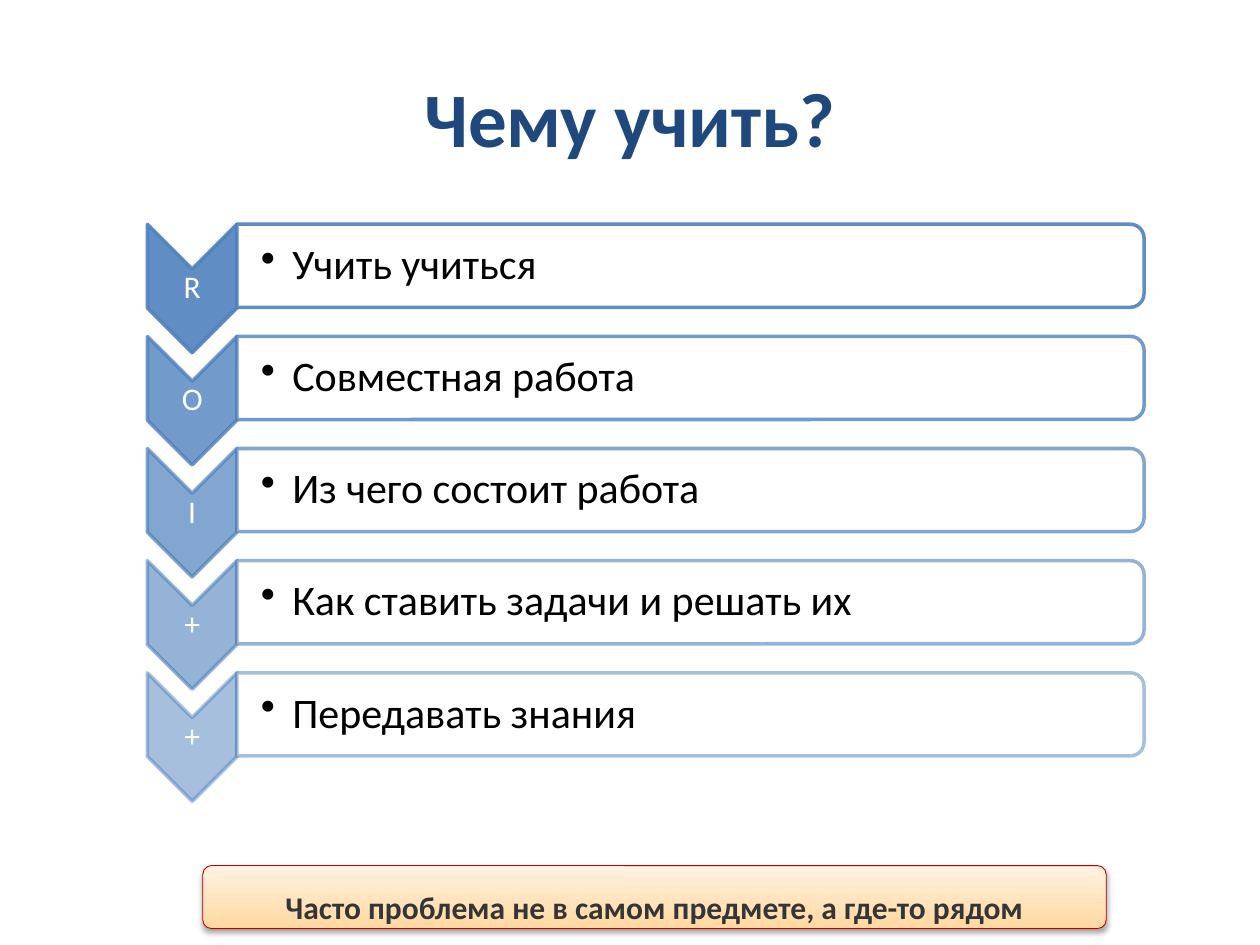
from lxml import etree
from pptx import Presentation
from pptx import util as u
from pptx.dml.color import RGBColor
from pptx.enum import shapes, text
from pptx.oxml import ns

COLORS = {
    "title": "1F497D", "accent": "4F81BD", "panel": "FFFFFF", "letter": "FFFFFF",
    "item": "000000", "note_low": "FFD8A0", "note_high": "FFF2E3",
    "note_line": "C00000", "note": "353535", "shadow": "000000",
}
RGB = {name: RGBColor.from_string(value) for name, value in COLORS.items()}
ITEMS = [
    ("R", "Учить учиться"),
    ("O", "Совместная работа"),
    ("I", "Из чего состоит работа"),
    ("+", "Как ставить задачи и решать их"),
    ("+", "Передавать знания"),
]
FIRST_ROW, ROW_STEP = 1.78, 0.89
CHEVRON_LEFT, CHEVRON_WIDTH, CHEVRON_HEIGHT = 1.17, 0.71, 1.02
PANEL_LEFT, PANEL_WIDTH, PANEL_HEIGHT = 1.88, 7.2, 0.66

presentation = Presentation()
presentation.slide_width, presentation.slide_height = u.Inches(10), u.Inches(7.5)
slide = presentation.slides.add_slide(presentation.slide_layouts[5])


def add_turned(kind, left, top, width, height, fill, opacities):
    shape = slide.shapes.add_shape(
        kind, u.Inches(left + (width - height) / 2), u.Inches(top + (height - width) / 2),
        u.Inches(height), u.Inches(width))
    shape.rotation = 90
    shape.shadow.inherit = False
    shape.fill.solid()
    shape.fill.fore_color.rgb = RGB[fill]
    shape.line.color.rgb = RGB["accent"]
    shape.line.width = u.Pt(2)
    colors = shape._element.spPr.iter(ns.qn("a:srgbClr"))
    for color, opacity in zip(colors, opacities):
        etree.SubElement(color, ns.qn("a:alpha"), val=str(opacity * 1000))


def add_label(words, left, top, width, height, size, color, inset, bullet=False):
    shape = slide.shapes.add_textbox(*map(u.Inches, (left, top, width, height)))
    frame = shape.text_frame
    frame.word_wrap = True
    frame.vertical_anchor = text.MSO_ANCHOR.MIDDLE
    frame.margin_left = u.Inches(inset)
    frame.margin_right = frame.margin_top = frame.margin_bottom = u.Inches(0.01)
    paragraph = frame.paragraphs[0]
    paragraph.text = words
    paragraph.line_spacing = 0.9
    if bullet:
        properties = paragraph._p.get_or_add_pPr()
        properties.set("marL", str(u.Inches(0.25)))
        properties.set("indent", str(-u.Inches(0.25)))
        etree.SubElement(properties, ns.qn("a:buChar"), char="•")
    else:
        paragraph.alignment = text.PP_ALIGN.CENTER
    paragraph.font.name = "Calibri"
    paragraph.font.size = u.Pt(size)
    paragraph.font.color.rgb = RGB[color]


title = slide.shapes.title
title.left, title.top, title.width, title.height = map(u.Inches, (0.5, 0.3, 9, 1.25))
title.text_frame.vertical_anchor = text.MSO_ANCHOR.MIDDLE
paragraph = title.text_frame.paragraphs[0]
paragraph.text = "Чему учить?"
paragraph.alignment = text.PP_ALIGN.CENTER
paragraph.font.name = "Calibri"
paragraph.font.size = u.Pt(44)
paragraph.font.bold = True
paragraph.font.color.rgb = RGB["title"]

for row, (letter, item) in enumerate(ITEMS):
    top = FIRST_ROW + row * ROW_STEP
    opacity = 90 - 10 * row
    add_turned(shapes.MSO_SHAPE.CHEVRON, CHEVRON_LEFT, top, CHEVRON_WIDTH,
               CHEVRON_HEIGHT, "accent", (opacity, opacity))
    add_label(letter, CHEVRON_LEFT, top + CHEVRON_WIDTH / 2, CHEVRON_WIDTH,
              CHEVRON_HEIGHT - CHEVRON_WIDTH, 18, "letter", 0.01)
    add_turned(shapes.MSO_SHAPE.ROUND_2_SAME_RECTANGLE, PANEL_LEFT, top, PANEL_WIDTH,
               PANEL_HEIGHT, "panel", (90, opacity))
    add_label(item, PANEL_LEFT, top, PANEL_WIDTH, PANEL_HEIGHT, 24, "item", 0.19, bullet=True)

note = slide.shapes.add_shape(
    shapes.MSO_SHAPE.ROUNDED_RECTANGLE, *map(u.Inches, (1.61, 6.87, 7.17, 0.5)))
note.adjustments[0] = 0.14
note.fill.gradient()
note.fill.gradient_angle = 90
for stop, color in zip(note.fill.gradient_stops, ("note_low", "note_high")):
    stop.color.rgb = RGB[color]
note.line.color.rgb = RGB["note_line"]
note.line.width = u.Pt(0.5)
note.shadow.inherit = False
effects = note._element.spPr.find(ns.qn("a:effectLst"))
shadow = etree.SubElement(
    effects, ns.qn("a:outerShdw"), blurRad=str(u.Pt(3.1)), dist=str(u.Pt(1.8)),
    dir="5400000", rotWithShape="0")
shadow_color = etree.SubElement(shadow, ns.qn("a:srgbClr"), val=COLORS["shadow"])
etree.SubElement(shadow_color, ns.qn("a:alpha"), val="35000")
frame = note.text_frame
frame.word_wrap = True
frame.vertical_anchor = text.MSO_ANCHOR.BOTTOM
frame.margin_top = frame.margin_bottom = 0
paragraph = frame.paragraphs[0]
paragraph.text = "Часто проблема не в самом предмете, а где-то рядом"
paragraph.alignment = text.PP_ALIGN.CENTER
paragraph.font.name = "Calibri"
paragraph.font.size = u.Pt(18)
paragraph.font.bold = True
paragraph.font.color.rgb = RGB["note"]

presentation.save("out.pptx")
